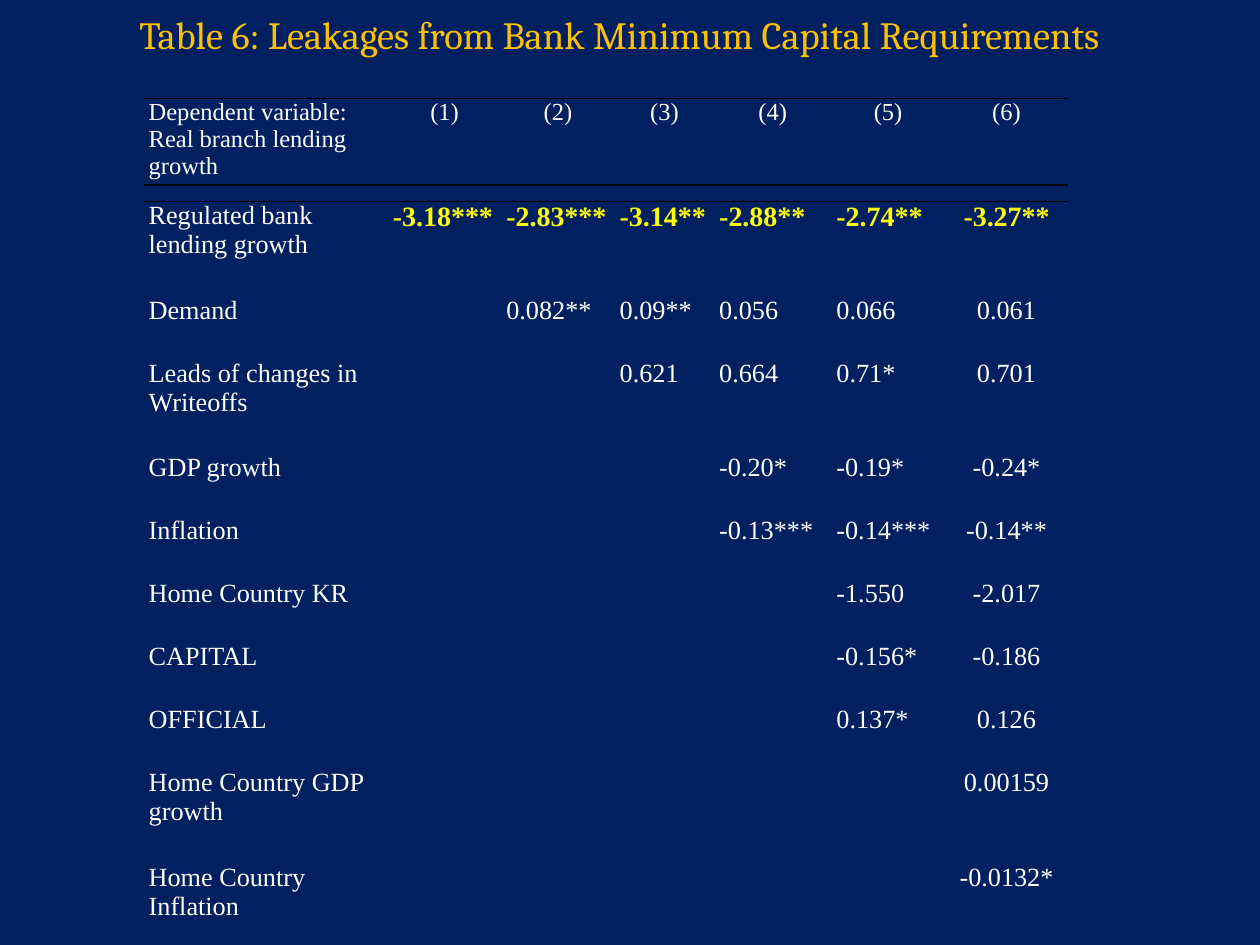
from dataclasses import dataclass

from lxml import etree
from pptx import Presentation
from pptx.dml.color import RGBColor
from pptx.enum import text
from pptx.oxml import ns
from pptx.util import Inches, Pt


@dataclass(frozen=True)
class Theme:
    background: str = "002060"
    title: str = "FFC000"
    body: str = "FFFFFF"
    highlight: str = "FFFF00"
    rule: str = "000000"
    title_font: str = "Cambria"
    body_font: str = "Times New Roman"
    title_size: int = 22
    header_size: int = 14
    body_size: int = 15
    highlight_size: int = 16
    spacer_size: int = 6
    plain_table: str = "{2D5ABB26-0587-4C30-8999-92F81FD0307C}"


HEADER = ["Dependent variable:\nReal branch lending growth"] + [f"({n})" for n in range(1, 7)]
ESTIMATES = [
    ("Regulated bank lending growth",
     ["-3.18***", "-2.83***", "-3.14**", "-2.88**", "-2.74**", "-3.27**"]),
    ("Demand", ["0.082**", "0.09**", "0.056", "0.066", "0.061"]),
    ("Leads of changes in Writeoffs", ["0.621", "0.664", "0.71*", "0.701"]),
    ("GDP growth", ["-0.20*", "-0.19*", "-0.24*"]),
    ("Inflation", ["-0.13***", "-0.14***", "-0.14**"]),
    ("Home Country KR", ["-1.550", "-2.017"]),
    ("CAPITAL", ["-0.156*", "-0.186"]),
    ("OFFICIAL", ["0.137*", "0.126"]),
    ("Home Country GDP growth", ["0.00159"]),
    ("Home Country Inflation", ["-0.0132*"]),
]
COLUMN_WIDTHS = [1.82, 0.09, 0.9, 0.9, 0.79, 0.93, 0.9, 0.98]
TWO_LINE_ROWS = {2, 6, 18, 20}
SPLIT_LABEL = "Home Country KR"


class SlideBuilder:
    """Holds the theme and the current slide and adds each kind of element."""

    def __init__(self, presentation, theme):
        self.theme = theme
        self.slide = presentation.slides.add_slide(presentation.slide_layouts[5])
        fill = self.slide.background.fill
        fill.solid()
        fill.fore_color.rgb = RGBColor.from_string(theme.background)

    def style(self, paragraph, font_name, size, color, bold=False, centered=False):
        paragraph.alignment = text.PP_ALIGN.CENTER if centered else text.PP_ALIGN.LEFT
        for run in paragraph.runs:
            run.font.name = font_name
            run.font.size = Pt(size)
            run.font.bold = bold
            run.font.color.rgb = RGBColor.from_string(color)

    def title(self, wording, left, top, width, height):
        heading = self.slide.shapes.title
        heading.left, heading.top = Inches(left), Inches(top)
        heading.width, heading.height = Inches(width), Inches(height)
        frame = heading.text_frame
        frame.text = wording
        frame.vertical_anchor = text.MSO_ANCHOR.TOP
        self.style(frame.paragraphs[0], self.theme.title_font, self.theme.title_size,
                   self.theme.title, centered=True)

    def rule(self, cell, edge):
        properties = cell._tc.get_or_add_tcPr()
        line = etree.SubElement(properties, ns.qn(f"a:{edge}"), w=str(Pt(1)))
        fill = etree.SubElement(line, ns.qn("a:solidFill"))
        etree.SubElement(fill, ns.qn("a:srgbClr"), val=self.theme.rule)

    def cell(self, cell, wording, size, color, bold=False, centered=False, edges=()):
        cell.margin_left = cell.margin_right = Inches(0.04)
        cell.margin_top = cell.margin_bottom = 0
        for edge in edges:
            self.rule(cell, edge)
        cell.fill.background()
        cell.text_frame.text = wording
        for paragraph in cell.text_frame.paragraphs:
            self.style(paragraph, self.theme.body_font, size, color, bold, centered)
            if not wording:
                ending = paragraph._p.get_or_add_endParaRPr()
                ending.set("sz", str(self.theme.spacer_size * 100))

    def table(self, rows, heights, left, top):
        theme = self.theme
        grid = self.slide.shapes.add_table(
            len(rows), len(COLUMN_WIDTHS), Inches(left), Inches(top),
            Inches(sum(COLUMN_WIDTHS)), Inches(sum(heights))).table
        grid.first_row = grid.horz_banding = False
        grid._tbl.tblPr.find(ns.qn("a:tableStyleId")).text = theme.plain_table
        for column, width in zip(grid.columns, COLUMN_WIDTHS):
            column.width = Inches(width)
        for row, height in zip(grid.rows, heights):
            row.height = Inches(height)
        for r, (label, *values) in enumerate(rows):
            edges = {0: ("lnT", "lnB"), 1: ("lnT",)}.get(r, ())
            for c, wording in enumerate([label, "", *values]):
                size = theme.header_size if r == 0 else theme.body_size
                color, bold = theme.body, False
                if r == 2 and c > 1:
                    size, color, bold = theme.highlight_size, theme.highlight, True
                centered = c > 1 and (r == 0 or c == len(COLUMN_WIDTHS) - 1)
                self.cell(grid.cell(r, c), wording, size, color, bold, centered, edges)
            start = 1 if label == SPLIT_LABEL else 0
            grid.cell(r, start).merge(grid.cell(r, start + 1))


def main():
    presentation = Presentation()
    presentation.slide_width, presentation.slide_height = Inches(10), Inches(7.5)
    spacer = [""] * len(HEADER)
    rows = [HEADER, spacer]
    for label, values in ESTIMATES:
        rows += [[label] + [""] * (6 - len(values)) + values, spacer]
    heights = [0.5 if r in TWO_LINE_ROWS else 0.25 for r in range(len(rows))]
    heights[0], heights[1], heights[-1] = 0.69, 0.13, 0.13

    builder = SlideBuilder(presentation, Theme())
    builder.table(rows, heights, 1.14, 0.78)
    builder.title("Table 6: Leakages from Bank Minimum Capital Requirements",
                  0.58, 0.04, 8.67, 0.77)
    presentation.save("out.pptx")


if __name__ == "__main__":
    main()
